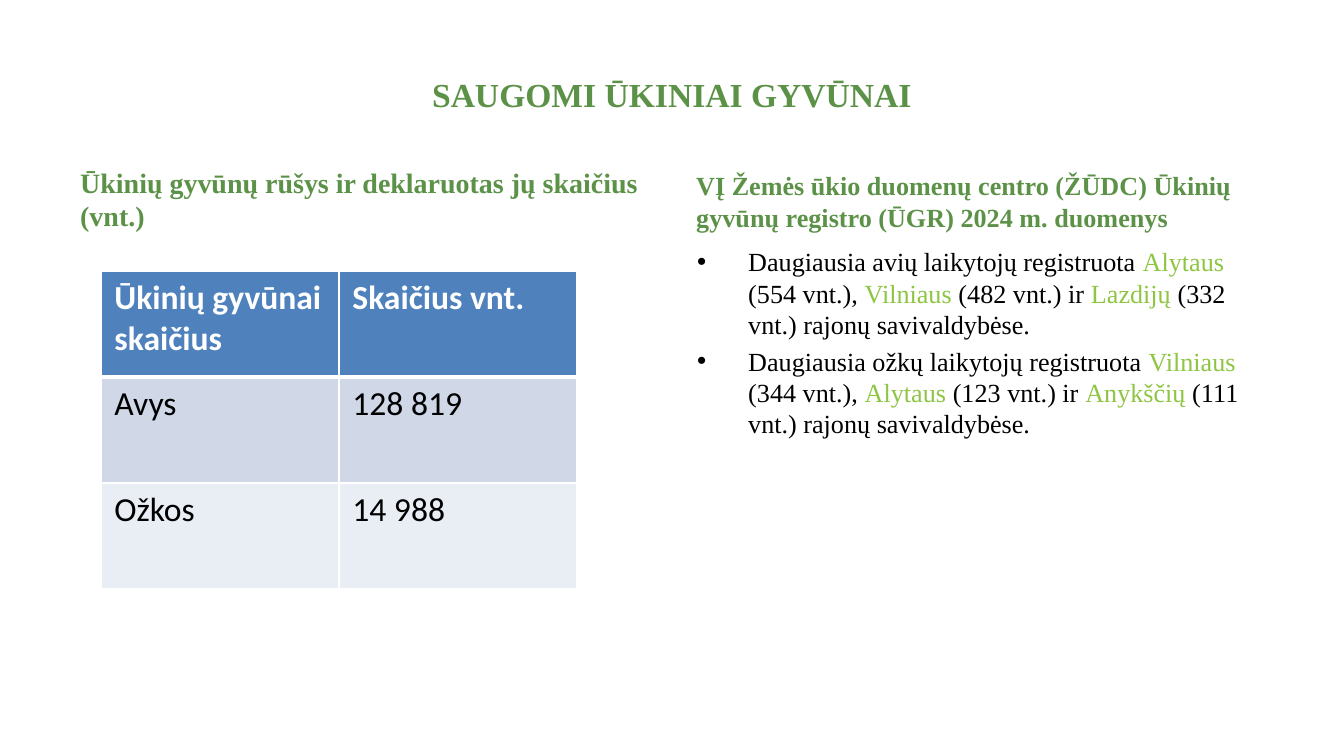
from lxml import etree
from pptx import Presentation
from pptx import util as u
from pptx.dml.color import RGBColor
from pptx.enum import text
from pptx.oxml.ns import qn

PX = 914400 / 134.4
SERIF = "Times New Roman"
GREEN, LIME, BLACK, WHITE = "5C9247", "8EC543", "000000", "FFFFFF"


def px(n):
    return u.Emu(round(n * PX))


def color(value):
    return RGBColor.from_string(value)


def add_run(p, words, size, fill, font=SERIF, bold=False):
    r = p.add_run()
    r.text = words
    r.font.size = u.Pt(size)
    r.font.name = font
    r.font.bold = bold
    r.font.color.rgb = color(fill)


def add_title(s, box, words):
    sp = s.shapes.title
    sp.left, sp.top, sp.width, sp.height = map(px, box)
    tf = sp.text_frame
    tf.auto_size = text.MSO_AUTO_SIZE.NONE
    tf.vertical_anchor = text.MSO_ANCHOR.MIDDLE
    p = tf.paragraphs[0]
    p.alignment = text.PP_ALIGN.CENTER
    add_run(p, words, 18, GREEN, bold=True)


def add_text_frame(s, box, anchor):
    tf = s.shapes.add_textbox(*map(px, box)).text_frame
    tf.word_wrap = True
    tf.vertical_anchor = anchor
    return tf


def add_heading(s, box, words, size):
    tf = add_text_frame(s, box, text.MSO_ANCHOR.BOTTOM)
    add_run(tf.paragraphs[0], words, size, GREEN, bold=True)


def set_bullet(p):
    pPr = p._p.get_or_add_pPr()
    pPr.set("marL", str(px(51)))
    pPr.set("indent", str(-px(51)))
    etree.SubElement(pPr, qn("a:buFont"), typeface="Arial")
    etree.SubElement(pPr, qn("a:buChar"), char="•")


def add_bullets(s, box, items):
    tf = add_text_frame(s, box, text.MSO_ANCHOR.TOP)
    for i, parts in enumerate(items):
        p = tf.add_paragraph() if i else tf.paragraphs[0]
        set_bullet(p)
        if i:
            p.space_before = u.Pt(2.8)
        for j, words in enumerate(parts):
            add_run(p, words, 14, LIME if j % 2 else BLACK)


def set_borders(cell, widths):
    tcPr = cell._tc.get_or_add_tcPr()
    for side, width in zip("LRTB", widths):
        ln = etree.SubElement(tcPr, qn(f"a:ln{side}"), w=str(u.Pt(width)))
        fill = etree.SubElement(ln, qn("a:solidFill"))
        etree.SubElement(fill, qn("a:srgbClr"), val=WHITE)


def add_table(s, box, rows, fills):
    table = s.shapes.add_table(len(rows), len(rows[0]), *map(px, box)).table
    table.first_row = table.horz_banding = False
    for i, row in enumerate(rows):
        header = i == 0
        for j, words in enumerate(row):
            cell = table.cell(i, j)
            set_borders(cell, (1, 1, 3 if i == 1 else 1, 3 if header else 1))
            cell.fill.solid()
            cell.fill.fore_color.rgb = color(fills[i])
            add_run(cell.text_frame.paragraphs[0], words, 18,
                    WHITE if header else BLACK, "Calibri", header)


def main():
    prs = Presentation()
    prs.slide_width, prs.slide_height = px(1344), px(756)
    s = prs.slides.add_slide(prs.slide_layouts[5])
    add_title(s, (67, 31, 1210, 126), "SAUGOMI ŪKINIAI GYVŪNAI")
    add_heading(s, (67, 169, 594, 70),
                "Ūkinių gyvūnų rūšys ir deklaruotas jų skaičius (vnt.)", 15)
    add_heading(s, (683, 169, 594, 70),
                "VĮ Žemės ūkio duomenų centro (ŽŪDC) Ūkinių gyvūnų registro "
                "(ŪGR) 2024 m. duomenys", 14)
    add_bullets(s, (684, 239, 593, 466), [
        ("Daugiausia avių laikytojų registruota ", "Alytaus", " (554 vnt.), ",
         "Vilniaus", " (482 vnt.) ir ", "Lazdijų ",
         "(332 vnt.) rajonų savivaldybėse."),
        ("Daugiausia ožkų laikytojų registruota ", "Vilniaus", " (344 vnt.), ",
         "Alytaus ", "(123 vnt.) ir ", "Anykščių",
         " (111 vnt.) rajonų savivaldybėse."),
    ])
    add_table(s, (101, 271, 476, 318), [
        ("Ūkinių gyvūnai skaičius", "Skaičius vnt."),
        ("Avys", "128 819"),
        ("Ožkos", "14 988"),
    ], ("4F81BD", "D0D8E8", "E9EDF4"))
    prs.save("out.pptx")


if __name__ == "__main__":
    main()
